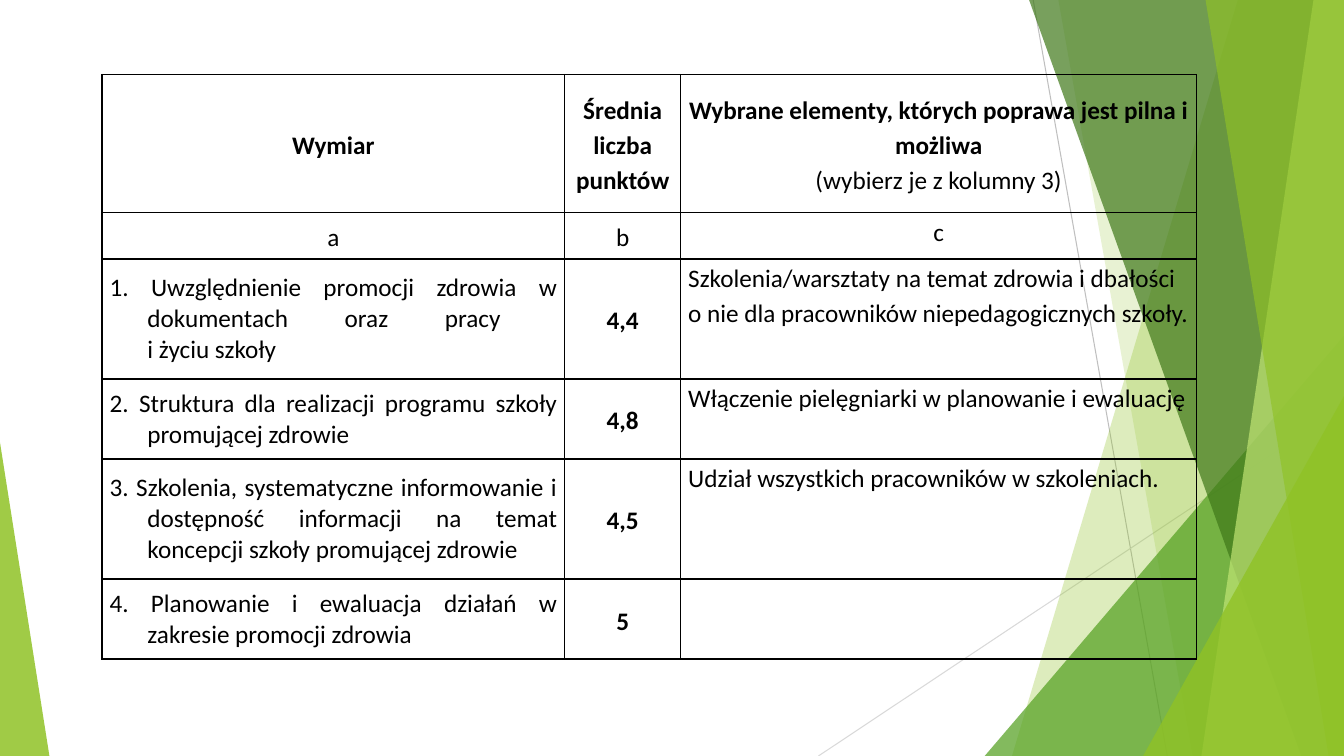
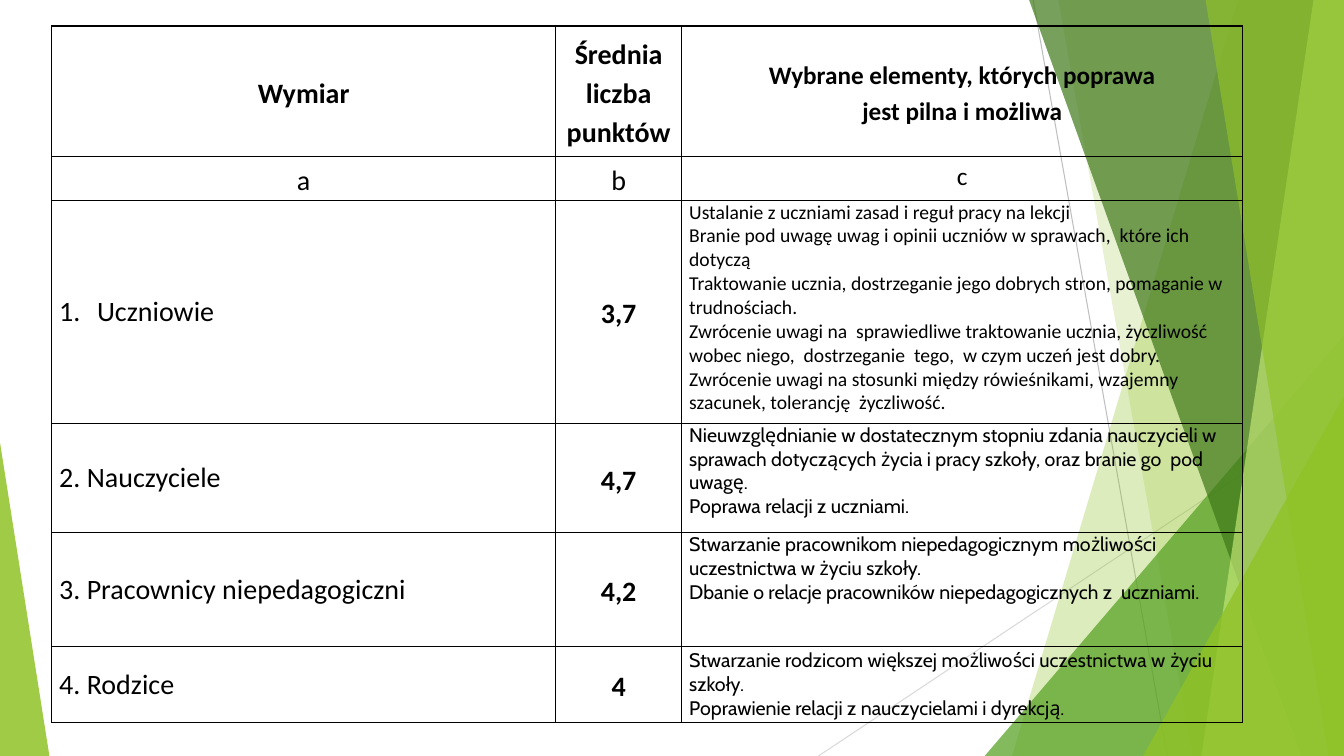
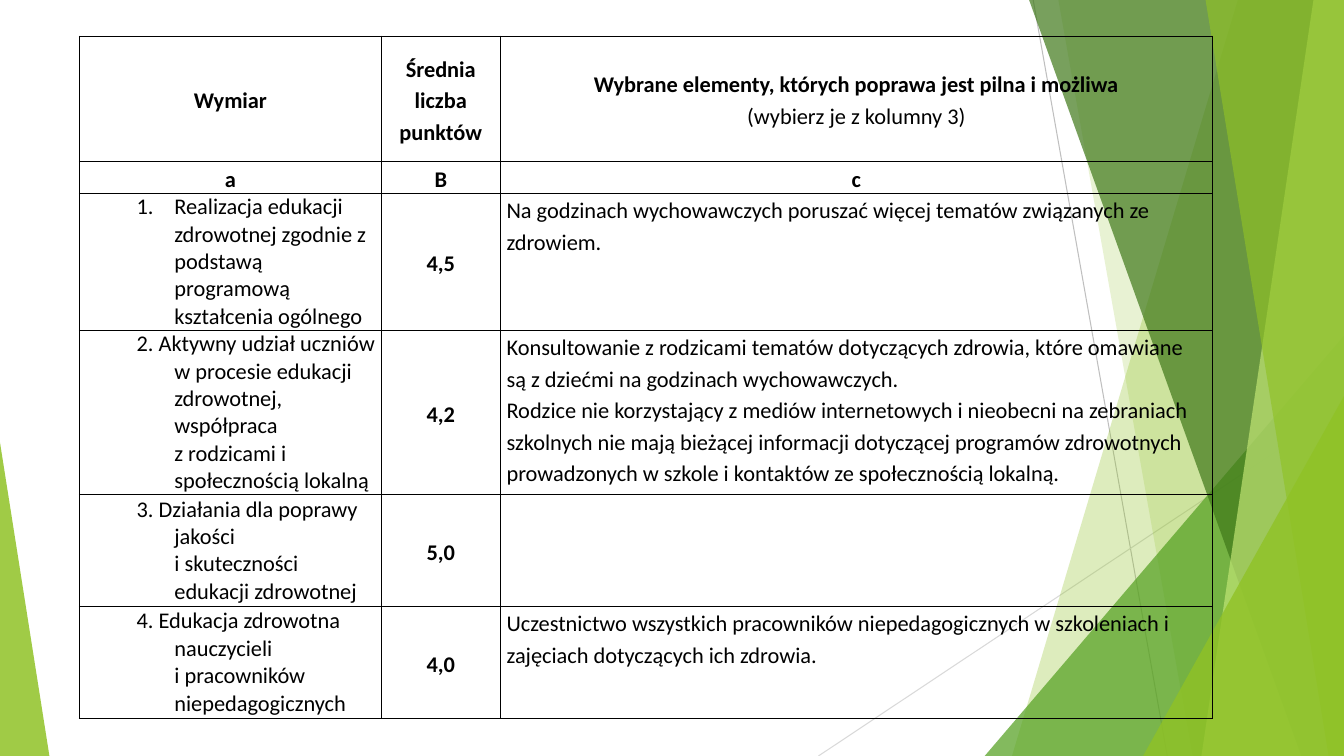
"""Build three slides of school health survey tables on a faceted green backdrop."""
from dataclasses import dataclass, replace

from lxml import etree
from copy import deepcopy
from pptx import Presentation
from pptx.dml.color import RGBColor
from pptx.enum.shapes import MSO_CONNECTOR, MSO_SHAPE
from pptx.enum.text import MSO_ANCHOR, PP_ALIGN
from pptx.oxml.ns import qn
from pptx.util import Pt

STRAIGHT = MSO_CONNECTOR.STRAIGHT
TRIANGLE = MSO_SHAPE.ISOSCELES_TRIANGLE
LEFT, CENTER, JUSTIFY = PP_ALIGN.LEFT, PP_ALIGN.CENTER, PP_ALIGN.JUSTIFY
TOP, MIDDLE = MSO_ANCHOR.TOP, MSO_ANCHOR.MIDDLE

BLACK = RGBColor(0x00, 0x00, 0x00)
GREY = RGBColor(0xBF, 0xBF, 0xBF)
LIGHT_GREY = RGBColor(0xD9, 0xD9, 0xD9)
LIME = RGBColor(0x90, 0xC2, 0x26)
PALE_LIME = RGBColor(0xC0, 0xE4, 0x74)
GREEN = RGBColor(0x54, 0xA0, 0x21)
DARK_GREEN = RGBColor(0x3F, 0x78, 0x19)

WIDTH, HEIGHT = 960, 540
BORDER_WIDTH = 1
HANGING = 27


@dataclass(frozen=True)
class TextStyle:
    """Look of one paragraph in a table cell."""
    size: float
    bold: bool = False
    align: PP_ALIGN = LEFT
    spacing: float = 1.15
    anchor: MSO_ANCHOR = MIDDLE
    font: str = "Calibri"
    indent: float = 0
    numbered: bool = False


def apply(target, formats):
    """Set every format value on the target."""
    for name, value in formats.items():
        setattr(target, name, value)


def lines(style, *texts):
    """Pair each paragraph text with the same style."""
    return [(text, style) for text in texts]


def finish_facet(shape, color, opacity):
    """Give a backdrop shape a translucent fill without outline or shadow."""
    shape.shadow.inherit = False
    shape.line.fill.background()
    shape.fill.solid()
    shape.fill.fore_color.rgb = color
    tint = next(shape.element.iter(qn("a:srgbClr")))
    etree.SubElement(tint, qn("a:alpha"), val=str(opacity * 1000))


def add_band(slide, top_x, bottom_x, color, opacity):
    """Draw a slanted band reaching the right slide edge."""
    outline = slide.shapes.build_freeform(Pt(top_x), 0)
    corners = [(WIDTH, 0), (WIDTH, HEIGHT), (bottom_x, HEIGHT)]
    outline.add_line_segments([(Pt(x), Pt(y)) for x, y in corners], close=True)
    finish_facet(outline.convert_to_shape(), color, opacity)


def add_corner(slide, left, top, width, apex, color, opacity):
    """Draw a right triangle standing on the bottom slide edge."""
    shape = slide.shapes.add_shape(TRIANGLE, Pt(left), Pt(top), Pt(width), Pt(HEIGHT - top))
    shape.adjustments[0] = apex
    finish_facet(shape, color, opacity)


def add_hairline(slide, start, end, color):
    """Draw a thin straight line."""
    line = slide.shapes.add_connector(STRAIGHT, *map(Pt, start + end))
    line.line.color.rgb = color
    line.line.width = Pt(0.75)
    etree.SubElement(line.element.spPr, qn("a:effectLst"))


def move_to_layout(slide, layout):
    """Make the shapes of the slide the only content of the layout."""
    for placeholder in list(layout.placeholders):
        layout.shapes.element.remove(placeholder.element)
    for shape in list(slide.shapes):
        layout.shapes.element.append(shape.element)


def draw_backdrop(slide):
    """Draw the hairlines and green facets, back to front."""
    add_hairline(slide, (738, 0), (833.8, HEIGHT), GREY)
    add_hairline(slide, (WIDTH, 290.2), (584.6, HEIGHT), LIGHT_GREY)
    add_band(slide, 884.2, 722.9, LIME, 30)
    add_band(slide, 756, 851.8, LIME, 20)
    add_corner(slide, 703.4, 239.8, 256.6, 1, GREEN, 72)
    add_band(slide, 735.1, 929.5, DARK_GREEN, 70)
    add_band(slide, 938.2, 858.2, PALE_LIME, 70)
    add_band(slide, 861.1, 949, LIME, 65)
    add_corner(slide, 816.5, 283, 143.5, 1, LIME, 80)
    add_corner(slide, 0, 316.1, 35.3, 0, LIME, 85)


def border_cell(cell):
    """Put a black line on each side of the cell."""
    properties = cell._tc.get_or_add_tcPr()
    for position, side in enumerate(("lnL", "lnR", "lnT", "lnB")):
        border = etree.Element(qn(f"a:{side}"), w=str(Pt(BORDER_WIDTH)))
        fill = etree.SubElement(border, qn("a:solidFill"))
        etree.SubElement(fill, qn("a:srgbClr"), val=str(BLACK))
        properties.insert(position, border)


def write_paragraph(para, text, style):
    """Write one paragraph; a vertical tab is a line break."""
    para.text = text
    apply(para, {"alignment": style.align, "line_spacing": style.spacing})
    for span in para.runs:
        apply(span.font, {"name": style.font, "size": Pt(style.size), "bold": style.bold})
        span.font.color.rgb = BLACK
    for line_break in para._p.findall(qn("a:br")):
        line_break.append(deepcopy(para.runs[0].font._element))
    if style.indent:
        properties = para._p.get_or_add_pPr()
        properties.set("marL", str(Pt(style.indent)))
        properties.set("indent", str(-Pt(HANGING)))
        if style.numbered:
            etree.SubElement(properties, qn("a:buAutoNum"), type="arabicPeriod")


def fill_cell(cell, content, inset):
    """Format a cell and write its paragraphs."""
    apply(cell, {"margin_left": Pt(inset), "margin_right": Pt(inset),
                 "margin_top": 0, "margin_bottom": 0})
    cell.fill.background()
    border_cell(cell)
    frame = cell.text_frame
    for index, (text, style) in enumerate(content):
        cell.vertical_anchor = style.anchor
        para = frame.add_paragraph() if index else frame.paragraphs[0]
        write_paragraph(para, text, style)


def add_grid(slide, corner, widths, heights, rows, inset):
    """Add a bordered table without fills."""
    frame = slide.shapes.add_table(len(heights), len(widths), Pt(corner[0]), Pt(corner[1]),
                                   Pt(sum(widths)), Pt(sum(heights)))
    table = frame.table
    apply(table, {"first_row": False, "horz_banding": False})
    for column, width in zip(table.columns, widths):
        column.width = Pt(width)
    for row, height, contents in zip(table.rows, heights, rows):
        row.height = Pt(height)
        for cell, content in zip(row.cells, contents):
            fill_cell(cell, content, inset)


def header_row(style, elements):
    """Return the heading cells with the given last one."""
    return [lines(style, "Wymiar"), lines(style, "Średnia liczba punktów"), elements]


def fill_concept_slide(slide):
    """Table on the concept of a health promoting school."""
    head = TextStyle(18, True, CENTER)
    plain = replace(head, bold=False)
    label = TextStyle(18, align=JUSTIFY, spacing=1.0, indent=HANGING)
    remark = TextStyle(18, anchor=TOP)
    items = [
        ("1. Uwzględnienie promocji zdrowia w dokumentach oraz pracy \vi życiu szkoły", "4,4",
         ["Szkolenia/warsztaty na temat zdrowia i dbałości o nie dla pracowników "
          "niepedagogicznych szkoły."]),
        ("2. Struktura dla realizacji programu szkoły promującej zdrowie", "4,8",
         ["Włączenie pielęgniarki w planowanie i ewaluację"]),
        ("3. Szkolenia, systematyczne informowanie i dostępność informacji na temat koncepcji "
         "szkoły promującej zdrowie", "4,5", ["Udział wszystkich pracowników w szkoleniach."]),
        ("4. Planowanie i ewaluacja działań w zakresie promocji zdrowia", "5", []),
    ]
    rows = [
        header_row(head, lines(head, "Wybrane elementy, których poprawa jest pilna i możliwa")
                   + lines(plain, "(wybierz je z kolumny 3)")),
        [lines(plain, "a"), lines(plain, "b"), lines(replace(plain, anchor=TOP), "c")],
    ] + [[lines(label, name), lines(head, score), lines(remark, *notes)]
         for name, score, notes in items]
    add_grid(slide, (72.9, 53.2), (330.5, 82.8, 368.6),
             (98.8, 33, 85.8, 57.1, 85.8, 57.1), rows, 5.4)


def fill_climate_slide(slide):
    """Table on the social climate of the school."""
    head = TextStyle(20, True, CENTER)
    plain = replace(head, bold=False)
    label = TextStyle(20, align=JUSTIFY, spacing=1.0, indent=HANGING)
    numbered = replace(label, numbered=True)
    remark = TextStyle(14, spacing=1.0, anchor=TOP)
    cabin = replace(remark, font="Cabin")
    items = [
        (numbered, "Uczniowie", "3,7", remark,
         ["Ustalanie z uczniami zasad i reguł pracy na lekcji",
          "Branie pod uwagę uwag i opinii uczniów w sprawach,  które ich dotyczą",
          "Traktowanie ucznia, dostrzeganie jego dobrych stron, pomaganie w trudnościach.",
          "Zwrócenie uwagi na  sprawiedliwe traktowanie ucznia, życzliwość wobec niego,  "
          "dostrzeganie  tego,  w czym uczeń jest dobry.",
          "Zwrócenie uwagi na stosunki między rówieśnikami, wzajemny szacunek, "
          "tolerancję  życzliwość."]),
        (label, "2. Nauczyciele", "4,7", cabin,
         ["Nieuwzględnianie w dostatecznym stopniu zdania nauczycieli w sprawach dotyczących "
          "życia i pracy szkoły, oraz branie go  pod uwagę.",
          "Poprawa relacji z uczniami."]),
        (label, "3. Pracownicy niepedagogiczni", "4,2", cabin,
         ["Stwarzanie pracownikom niepedagogicznym możliwości uczestnictwa w życiu szkoły.",
          "Dbanie o relacje pracowników niepedagogicznych z  uczniami."]),
        (label, "4. Rodzice", "4", replace(cabin, anchor=MIDDLE),
         ["Stwarzanie rodzicom większej możliwości uczestnictwa w życiu szkoły.",
          "Poprawienie relacji z nauczycielami i dyrekcją."]),
    ]
    rows = [
        header_row(head, lines(replace(head, size=18), "Wybrane elementy, których poprawa",
                               "jest pilna i możliwa")),
        [lines(plain, "a"), lines(plain, "b"),
         lines(replace(plain, size=18, anchor=TOP), "c")],
    ] + [[lines(name_style, name), lines(head, score), lines(note_style, *notes)]
         for name_style, name, score, note_style, notes in items]
    add_grid(slide, (36.9, 18.6), (360, 90, 400.8),
             (93.4, 31.2, 159.2, 78.3, 81.3, 54), rows, 5.4)


def fill_education_slide(slide):
    """Table on health education."""
    head = TextStyle(16, True, CENTER)
    label = TextStyle(16, spacing=1.0, indent=63.3)
    numbered = replace(label, numbered=True)
    remark = TextStyle(16, anchor=TOP)
    items = [
        (numbered, "Realizacja edukacji zdrowotnej zgodnie z podstawą programową kształcenia "
         "ogólnego", "4,5",
         ["Na godzinach wychowawczych poruszać więcej tematów związanych ze zdrowiem."]),
        (label, "2. Aktywny udział uczniów w procesie edukacji zdrowotnej, współpraca "
         "\vz rodzicami i społecznością lokalną", "4,2",
         ["Konsultowanie z rodzicami tematów dotyczących zdrowia, które omawiane są z dziećmi "
          "na godzinach wychowawczych.",
          "Rodzice nie korzystający z mediów internetowych i nieobecni na zebraniach szkolnych "
          "nie mają bieżącej informacji dotyczącej programów zdrowotnych prowadzonych w szkole "
          "i kontaktów ze społecznością lokalną."]),
        (label, "3. Działania dla poprawy jakości \vi skuteczności edukacji zdrowotnej",
         "5,0", []),
        (label, "4. Edukacja zdrowotna nauczycieli \vi pracowników niepedagogicznych", "4,0",
         ["Uczestnictwo wszystkich pracowników niepedagogicznych w szkoleniach i zajęciach "
          "dotyczących ich zdrowia."]),
    ]
    rows = [
        header_row(head, lines(head, "Wybrane elementy, których poprawa jest pilna i możliwa")
                   + lines(replace(head, bold=False), "(wybierz je z kolumny 3)")),
        [lines(head, letter) for letter in "aBc"],
    ] + [[lines(style, name), lines(head, score), lines(remark, *notes)]
         for style, name, score, notes in items]
    add_grid(slide, (56.7, 25.8), (215.8, 84.8, 508.9),
             (89.8, 21.9, 79.9, 106.6, 79.9, 79.9), rows, 4.6)


def main():
    """Build and save the deck."""
    deck = Presentation()
    apply(deck, {"slide_width": Pt(WIDTH), "slide_height": Pt(HEIGHT)})
    layout = deck.slide_layouts[6]
    pages = [deck.slides.add_slide(layout) for _ in range(3)]
    draw_backdrop(pages[0])
    move_to_layout(pages[0], layout)
    fillers = (fill_concept_slide, fill_climate_slide, fill_education_slide)
    for page, fill_page in zip(pages, fillers):
        fill_page(page)
    deck.save("out.pptx")


if __name__ == "__main__":
    main()
